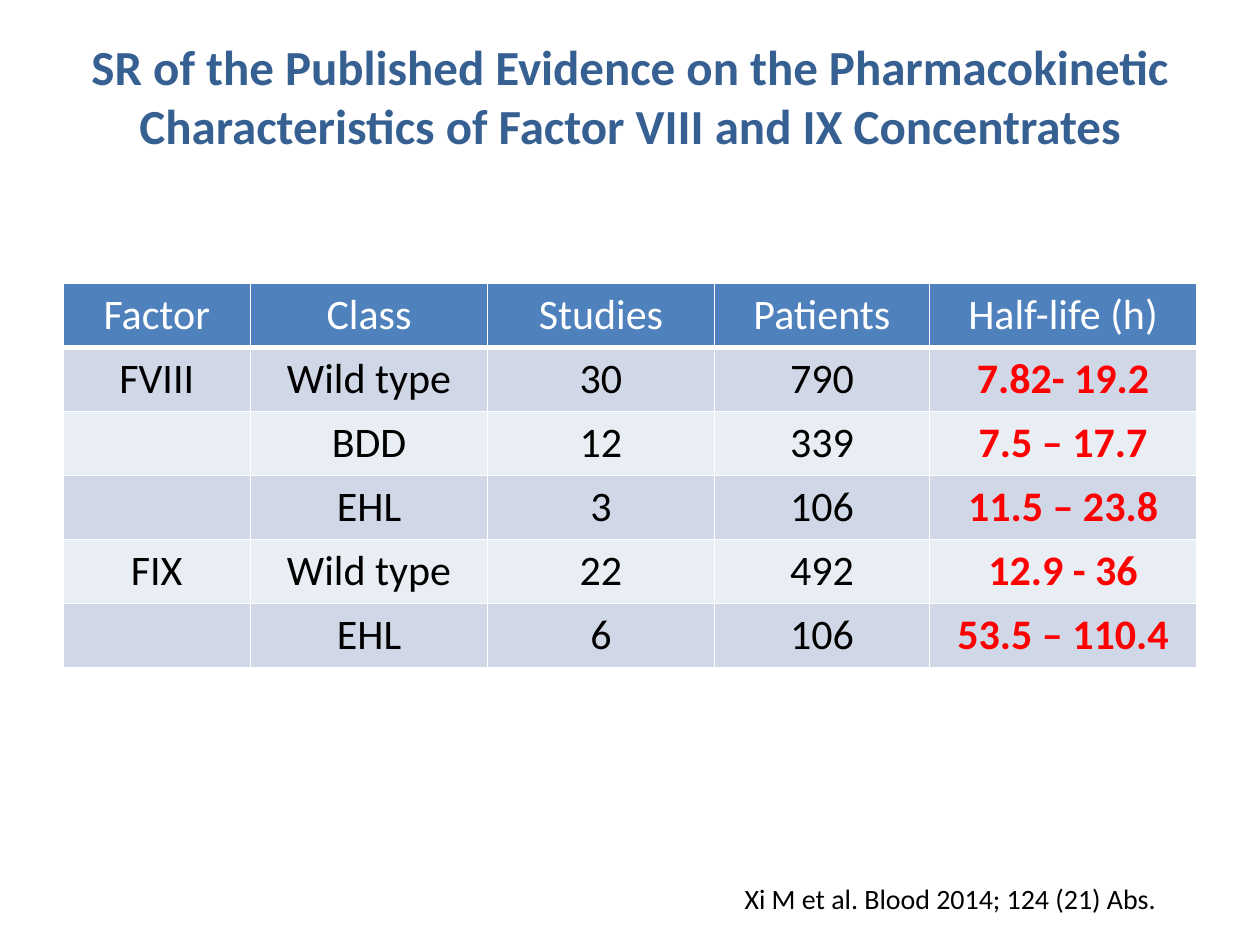
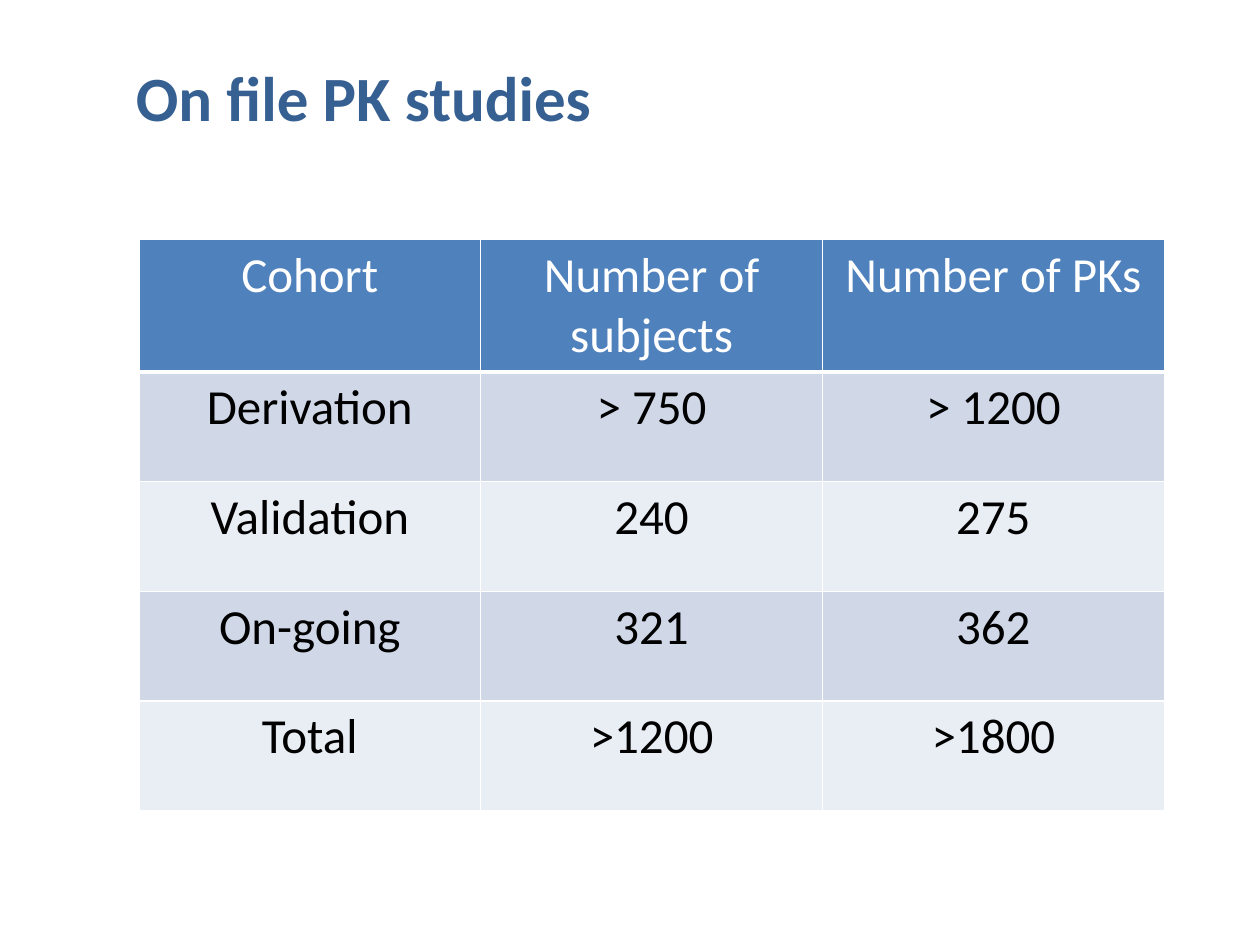
from lxml.etree import SubElement
from pptx import Presentation
from pptx.dml.color import RGBColor
from pptx.enum.text import MSO_ANCHOR as Anchor, PP_ALIGN as Align
from pptx.oxml.ns import qn
from pptx.util import Cm, Pt

FONT = "Calibri"
NAVY = RGBColor(0x37, 0x60, 0x92)
HEADER_BLUE = RGBColor(0x4F, 0x81, 0xBD)
BANDS = (RGBColor(0xD0, 0xD8, 0xE8), RGBColor(0xE9, 0xED, 0xF4))
RED = RGBColor(0xFF, 0x00, 0x00)
BLACK = RGBColor(0x00, 0x00, 0x00)
WHITE = RGBColor(0xFF, 0xFF, 0xFF)

HALF_LIVES = [
    ("Factor", "Class", "Studies", "Patients", "Half-life (h)"),
    ("FVIII", "Wild type", "30", "790", "7.82- 19.2"),
    ("", "BDD", "12", "339", "7.5 – 17.7"),
    ("", "EHL", "3", "106", "11.5 – 23.8"),
    ("FIX", "Wild type", "22", "492", "12.9 - 36"),
    ("", "EHL", "6", "106", "53.5 – 110.4"),
]
COHORTS = [
    ("Cohort", "Number of subjects", "Number of PKs"),
    ("Derivation", "> 750", "> 1200"),
    ("Validation", "240", "275"),
    ("On-going", "321", "362"),
    ("Total", ">1200", ">1800"),
]


class Deck:
    """Holds the shared style and the current page of the presentation."""

    def __init__(self):
        self.deck = Presentation()
        self.deck.slide_width, self.deck.slide_height = Cm(25.4), Cm(19.05)
        self.page = None

    def add_page(self):
        self.page = self.deck.slides.add_slide(self.deck.slide_layouts[6])

    def add_span(self, para, text, size, color, bold=False, align=Align.LEFT):
        para.alignment = align
        span = para.add_run()
        span.text = text
        span.font.name, span.font.size = FONT, Pt(size)
        span.font.bold, span.font.color.rgb = bold, color

    def add_text(self, place, text, size, color=BLACK, bold=False,
                 align=Align.LEFT, anchor=Anchor.TOP, bottom=0.13):
        box = self.page.shapes.add_textbox(*map(Cm, place))
        frame = box.text_frame
        frame.word_wrap = True
        frame.vertical_anchor = anchor
        frame.margin_bottom = Cm(bottom)
        self.add_span(frame.paragraphs[0], text, size, color, bold, align)

    def add_title(self, place, text, size, **layout):
        self.add_text(place, text, size, NAVY, True, **layout)

    def add_borders(self, cell, is_header):
        properties = cell._tc.get_or_add_tcPr()
        for side in "LRTB":
            points = 3 if is_header and side == "B" else 1
            line = SubElement(properties, qn(f"a:ln{side}"), w=str(Pt(points)))
            fill = SubElement(line, qn("a:solidFill"))
            SubElement(fill, qn("a:srgbClr"), val=str(WHITE))

    def add_table(self, left, top, widths, heights, rows, size, red_column=None):
        frame = self.page.shapes.add_table(
            len(rows), len(widths), Cm(left), Cm(top),
            Cm(sum(widths)), Cm(sum(heights)))
        table = frame.table
        for column, width in zip(table.columns, widths):
            column.width = Cm(width)
        for r, (texts, height) in enumerate(zip(rows, heights)):
            table.rows[r].height = Cm(height)
            is_header = r == 0
            for c, text in enumerate(texts):
                cell = table.cell(r, c)
                self.add_borders(cell, is_header)
                cell.fill.solid()
                cell.fill.fore_color.rgb = HEADER_BLUE if is_header else BANDS[(r - 1) % 2]
                is_red = c == red_column and not is_header
                color = WHITE if is_header else RED if is_red else BLACK
                if text:
                    self.add_span(cell.text_frame.paragraphs[0], text, size,
                                  color, is_red, Align.CENTER)


def main():
    deck = Deck()

    deck.add_page()
    deck.add_text((14.76, 17.65, 9.9, 0.94), "Xi M et al. Blood 2014; 124 (21) Abs.", 16)
    deck.add_title(
        (1.27, 0.86, 22.86, 3.18),
        "SR of the Published Evidence on the Pharmacokinetic "
        "Characteristics of Factor VIII and IX Concentrates",
        28, align=Align.CENTER, anchor=Anchor.MIDDLE, bottom=1.19)
    deck.add_table(1.27, 5.72, (3.78, 4.78, 4.57, 4.34, 5.38),
                   [1.29] * len(HALF_LIVES), HALF_LIVES, 24, red_column=4)

    deck.add_page()
    deck.add_title((2.49, 0.99, 22.86, 1.8), "On file PK studies", 36,
                   anchor=Anchor.BOTTOM, bottom=0.08)
    deck.add_table(2.8, 4.83, [6.89] * 3, [2.67] + [2.21] * 4, COHORTS, 28)

    deck.deck.save("out.pptx")


if __name__ == "__main__":
    main()
